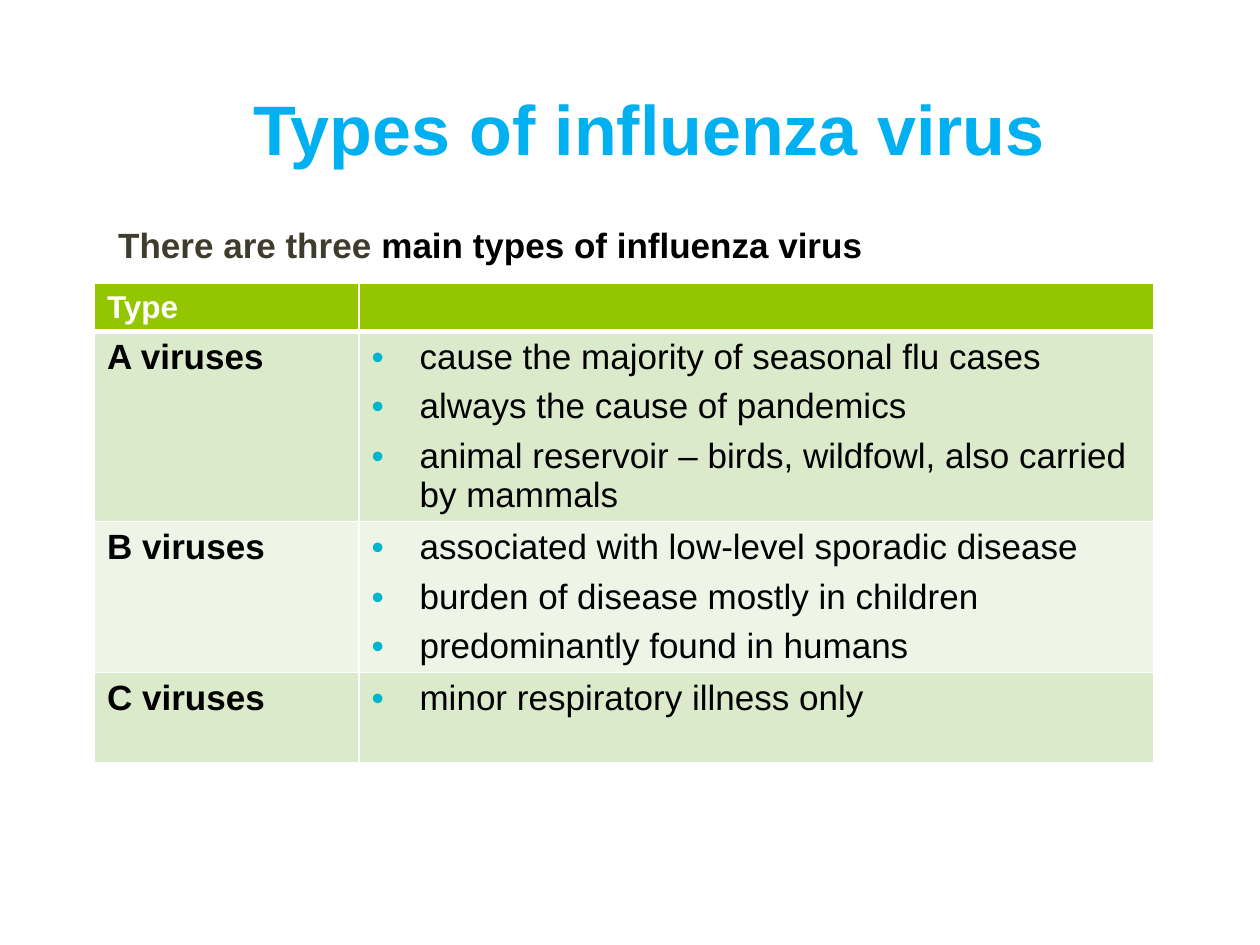
import pptx
import pptx.dml.color
import pptx.enum.text
import pptx.oxml
import pptx.oxml.ns
import pptx.util

COLORS = {
    "title": "00B0F0", "intro": "3E3D2D", "text": "000000", "white": "FFFFFF",
    "header": "94C600", "dark band": "DCEACC", "light band": "EEF5E7",
    "bullet": "00B5CC",
}
VIRUSES = [
    ("A viruses", ["cause the majority of seasonal flu cases",
                   "always the cause of pandemics",
                   "animal reservoir – birds, wildfowl, also carried by mammals"]),
    ("B viruses", ["associated with low-level sporadic disease",
                   "burden of disease mostly in children",
                   "predominantly found in humans"]),
    ("C viruses", ["minor respiratory illness only"]),
]
ROW_HEIGHTS = [0.37, 1.51, 1.19, 0.72]
COLUMN_WIDTHS = [2.1, 6.31]


def rgb(name):
    return pptx.dml.color.RGBColor.from_string(COLORS[name])


class SlideBuilder:
    """Holds the style and the current slide; places are shares of the slide."""

    font_name = "Arial"
    indent = pptx.util.Inches(0.38)

    def __init__(self, presentation):
        self.width = presentation.slide_width
        self.height = presentation.slide_height
        self.slide = presentation.slides.add_slide(presentation.slide_layouts[5])

    def box(self, left, top, width, height):
        return (round(left * self.width), round(top * self.height),
                round(width * self.width), round(height * self.height))

    def style(self, font, size, color, bold=False):
        font.name = self.font_name
        font.size = pptx.util.Pt(size)
        font.bold = bold
        font.color.rgb = rgb(color)

    def title(self, text, *place):
        shape = self.slide.shapes.title
        shape.left, shape.top, shape.width, shape.height = self.box(*place)
        frame = shape.text_frame
        frame.text = text
        frame.word_wrap = False
        frame.vertical_anchor = pptx.enum.text.MSO_ANCHOR.MIDDLE
        paragraph = frame.paragraphs[0]
        paragraph.alignment = pptx.enum.text.PP_ALIGN.CENTER
        self.style(paragraph.font, 40, "title", True)

    def text(self, parts, *place):
        """Add one line of bold text from (words, color) parts."""
        frame = self.slide.shapes.add_textbox(*self.box(*place)).text_frame
        frame.word_wrap = True
        for words, color in parts:
            run = frame.paragraphs[0].add_run()
            run.text = words
            self.style(run.font, 20, color, True)

    def bullet(self, paragraph):
        properties = paragraph._p.get_or_add_pPr()
        properties.set("marL", str(self.indent))
        properties.set("indent", str(-self.indent))
        paragraph.space_after = pptx.util.Pt(6)
        namespace = pptx.oxml.ns.nsdecls("a")
        for xml in (
            f'<a:buClr {namespace}><a:srgbClr val="{COLORS["bullet"]}"/></a:buClr>',
            f'<a:buFont {namespace} typeface="{self.font_name}"/>',
            f'<a:buChar {namespace} char="•"/>',
        ):
            properties.append(pptx.oxml.parse_xml(xml))

    def cell(self, cell, lines, size, color, fill, bold=False, bulleted=False,
             bottom=1):
        cell.text = "\n".join(lines)
        for paragraph in cell.text_frame.paragraphs:
            if bulleted:
                self.bullet(paragraph)
            self.style(paragraph.font, size, color, bold)
        cell.fill.solid()
        cell.fill.fore_color.rgb = rgb(fill)
        self.borders(cell, bottom)

    def borders(self, cell, bottom):
        properties = cell._tc.get_or_add_tcPr()
        sides = {"lnL": 1, "lnR": 1, "lnT": 1, "lnB": bottom}
        for index, (side, points) in enumerate(sides.items()):
            properties.insert(index, pptx.oxml.parse_xml(
                f'<a:{side} {pptx.oxml.ns.nsdecls("a")} w="{pptx.util.Pt(points)}">'
                f'<a:solidFill><a:srgbClr val="{COLORS["white"]}"/></a:solidFill>'
                f'</a:{side}>'))

    def table(self, viruses, *place):
        table = self.slide.shapes.add_table(
            len(ROW_HEIGHTS), len(COLUMN_WIDTHS), *self.box(*place)).table
        for column, width in zip(table.columns, COLUMN_WIDTHS):
            column.width = pptx.util.Inches(width)
        for row, height in zip(table.rows, ROW_HEIGHTS):
            row.height = pptx.util.Inches(height)
        for column, heading in enumerate(["Type", ""]):
            self.cell(table.cell(0, column), [heading], 18, "white", "header",
                      bold=True, bottom=3)
        for row, (name, facts) in enumerate(viruses, start=1):
            band = "dark band" if row % 2 else "light band"
            self.cell(table.cell(row, 0), [name], 20, "text", band, bold=True)
            self.cell(table.cell(row, 1), facts, 20, "text", band, bulleted=True)


def main():
    presentation = pptx.Presentation()
    presentation.slide_width = pptx.util.Inches(10)
    presentation.slide_height = pptx.util.Inches(7.5)
    builder = SlideBuilder(presentation)
    builder.title("Types of influenza virus", 0.075, 0.05, 0.88, 0.17)
    builder.table(VIRUSES, 0.075, 0.3, 0.84, 0.51)
    builder.text([("There are three ", "intro"),
                  ("main types of influenza virus", "text")],
                 0.084, 0.23, 0.63, 0.06)
    presentation.save("out.pptx")


if __name__ == "__main__":
    main()
